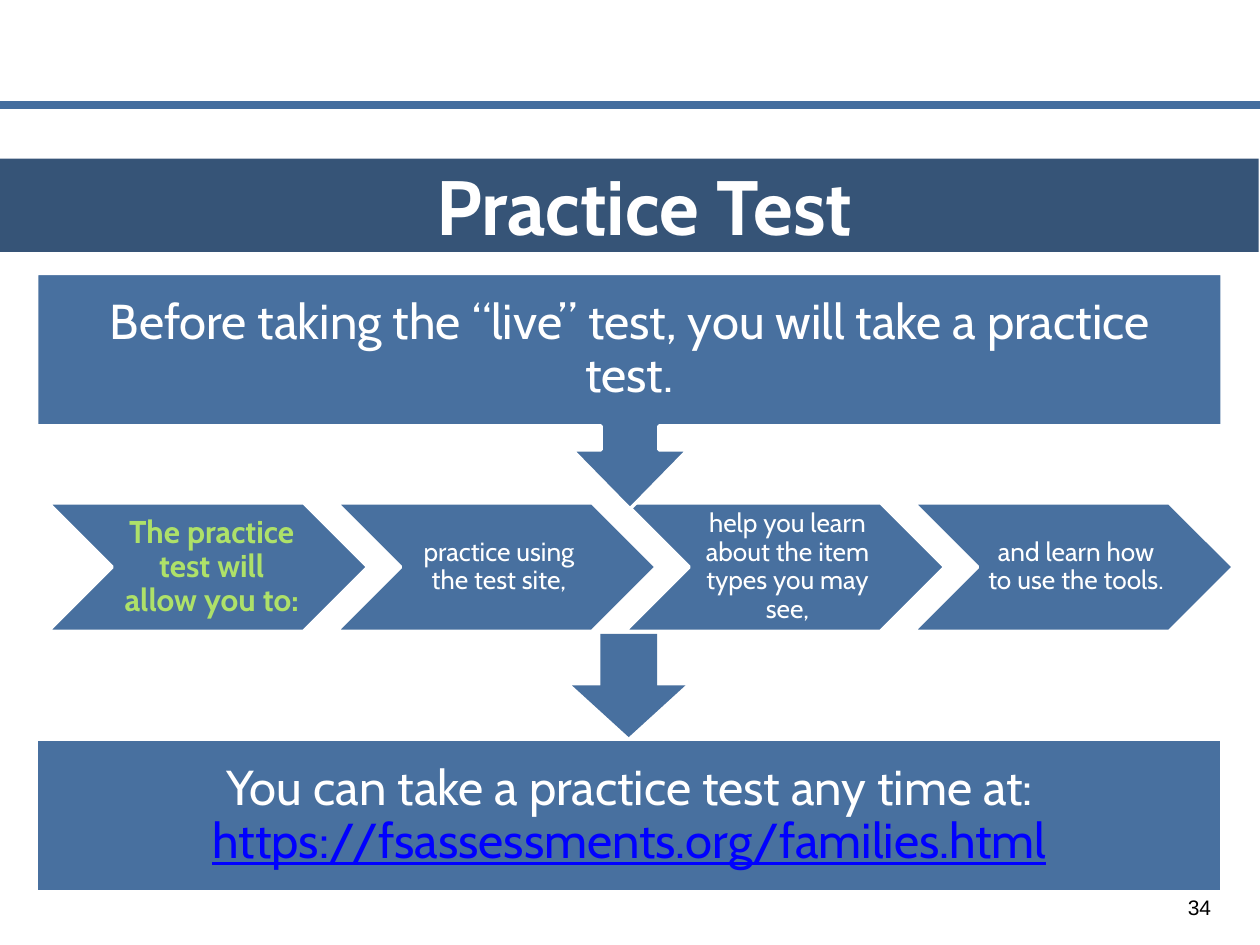
from lxml import etree
from pptx import Presentation
from pptx.dml.color import RGBColor
from pptx.enum.shapes import MSO_CONNECTOR, MSO_SHAPE
from pptx.enum.text import MSO_ANCHOR, PP_ALIGN
from pptx.oxml.ns import qn
from pptx.util import Inches, Pt

RECT, DOWN = MSO_SHAPE.RECTANGLE, MSO_SHAPE.DOWN_ARROW
LINE = MSO_CONNECTOR.STRAIGHT
TOP, MIDDLE = MSO_ANCHOR.TOP, MSO_ANCHOR.MIDDLE
CENTER = PP_ALIGN.CENTER

BLUE, NAVY, WHITE, GREEN, LINK = "48709F", "365477", "FFFFFF", "AEE169", "0000FF"
INTRO = "Before taking the “live” test, you will take a practice test."
CLOSING = ["You can take a practice test any time at: ",
           "https://fsassessments.org/families.html"]
STEPS = [
    ("The practice test will allow you to:", 18, GREEN, True),
    ("practice using the test site,", 15, WHITE, False),
    ("help you learn about the item types you may see,", 15, WHITE, False),
    ("and learn how to use the tools.", 15, WHITE, False),
]
LEFT, RIGHT, MID = 0.29, 9.7, 5.0
ROW, TALL, WIDE, STEP = 3.99, 1.02, 2.54, 2.29


def color(value):
    return RGBColor.from_string(value)


def paint(shape, fill, edge=None):
    shape.shadow.inherit = False
    shape.fill.solid()
    shape.fill.fore_color.rgb = color(fill)
    if edge:
        shape.line.color.rgb = color(edge)
        shape.line.width = Pt(2)
    else:
        shape.line.fill.background()


def write(shape, texts, size, shade=WHITE, bold=False, pad=(0, 0, 0, 0),
          anchor=MIDDLE, font="Cabin", space=0.9):
    frame = shape.text_frame
    frame.word_wrap = True
    frame.vertical_anchor = anchor
    (frame.margin_left, frame.margin_top,
     frame.margin_right, frame.margin_bottom) = map(Inches, pad)
    para = frame.paragraphs[0]
    para.alignment = CENTER
    para.line_spacing = space
    for text in texts:
        run = para.add_run()
        run.text = text
        run.font.name = font
        run.font.size = Pt(size)
        run.font.bold = bold
        run.font.color.rgb = color(shade)
    return para


def block(kind, left, top, width, height, fill, edge=None):
    shape = shapes.add_shape(kind, *map(Inches, (left, top, width, height)))
    paint(shape, fill, edge)
    return shape


def outline(points):
    spots = [(Inches(x), Inches(y)) for x, y in points]
    pen = shapes.build_freeform(*spots[0])
    pen.add_line_segments(spots[1:])
    shape = pen.convert_to_shape()
    paint(shape, BLUE, WHITE)
    return shape


deck = Presentation()
deck.slide_width, deck.slide_height = Inches(10), Inches(7.5)
shapes = deck.slides.add_slide(deck.slide_layouts[6]).shapes

rule = shapes.add_connector(LINE, 0, Inches(0.83), Inches(10), Inches(0.83))
rule.line.color.rgb = color("446D9E")
rule.line.width = Pt(4.5)
etree.SubElement(rule._element.spPr, qn("a:effectLst"))

closing = block(RECT, LEFT, 5.87, RIGHT - LEFT, 1.21, BLUE, WHITE)
para = write(closing, CLOSING, 28, pad=(0.22,) * 4)
link = para.runs[1].font
link.color.rgb = color(LINK)
link.underline = True

for i, (text, size, shade, bold) in enumerate(STEPS):
    left, half = 0.38 + i * STEP, TALL / 2
    neck, tip = left + WIDE - half, left + WIDE
    chevron = outline([(left, ROW), (neck, ROW), (tip, ROW + half),
                       (neck, ROW + TALL), (left, ROW + TALL),
                       (left + half, ROW + half)])
    inset = 0.59 if i == 0 else 0.57
    write(chevron, [text], size, shade, bold, (inset, 0.02, 0.53, 0.02))

base, ledge = 3.38, 3.57
intro = outline([(LEFT, 2.17), (RIGHT, 2.17), (RIGHT, base),
                 (MID + 0.23, base), (MID + 0.23, ledge), (MID + 0.46, ledge),
                 (MID, 4.04), (MID - 0.46, ledge), (MID - 0.23, ledge),
                 (MID - 0.23, base), (LEFT, base)])
write(intro, [INTRO], 28, pad=(0.22, 0.22, 0.22, 0.87))

number = shapes.add_textbox(*map(Inches, (9.29, 7, 0.46, 0.4)))
write(number, ["34"], 12, "000000", pad=(0.05,) * 4, font="Arial", space=1)

title = block(RECT, -0.01, 1.26, 10, 0.74, NAVY)
para = write(title, ["Practice Test"], 44, bold=True, anchor=TOP, space=1)
para._p.get_or_add_pPr().set("marL", str(Inches(0.25)))

block(DOWN, 4.54, 5.03, 0.9, 0.82, BLUE)

deck.save("out.pptx")
